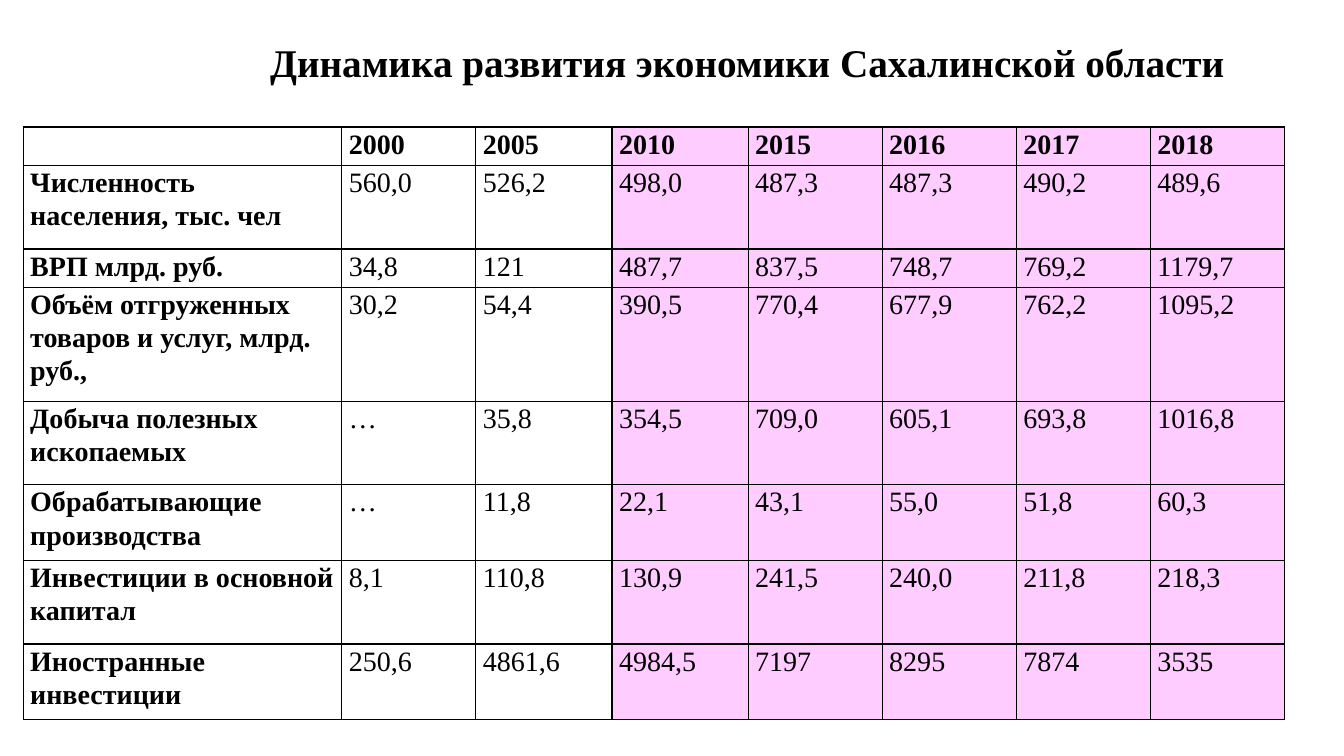
"""Builds a slide with a table of economic indicators of the Sakhalin region by year."""
from lxml import etree
from pptx import Presentation
from pptx.dml.color import RGBColor
from pptx.enum.text import MSO_ANCHOR, MSO_AUTO_SIZE, PP_ALIGN
from pptx.oxml.ns import qn
from pptx.util import Inches, Pt

LEFT = PP_ALIGN.LEFT
TOP = MSO_ANCHOR.TOP
GROW = MSO_AUTO_SIZE.SHAPE_TO_FIT_TEXT
FONT = "Times New Roman"
COLORS = {"text": "000000", "border": "000000", "plain": "FFFFFF", "recent": "FFCCFF"}
FIRST_RECENT_COLUMN = 3

COLUMN_WIDTHS = [3.16, 1.33, 1.35, 1.35, 1.33, 1.33, 1.33, 1.33]
ROW_HEIGHTS = [0.38, 0.83, 0.38, 1.13, 0.83, 0.75, 0.83, 0.75]
INDICATORS = [
    ["", "2000", "2005", "2010", "2015", "2016", "2017", "2018"],
    ["Численность населения, тыс. чел", "560,0", "526,2", "498,0", "487,3", "487,3", "490,2", "489,6"],
    ["ВРП млрд. руб.", "34,8", "121", "487,7", "837,5", "748,7", "769,2", "1179,7"],
    ["Объём отгруженных товаров и услуг, млрд. руб.,", "30,2", "54,4", "390,5", "770,4", "677,9", "762,2", "1095,2"],
    ["Добыча полезных ископаемых", "…", "35,8", "354,5", "709,0", "605,1", "693,8", "1016,8"],
    ["Обрабатывающие производства", "…", "11,8", "22,1", "43,1", "55,0", "51,8", "60,3"],
    ["Инвестиции в основной капитал", "8,1", "110,8", "130,9", "241,5", "240,0", "211,8", "218,3"],
    ["Иностранные инвестиции", "250,6", "4861,6", "4984,5", "7197", "8295", "7874", "3535"],
]


def write(para, text, size, bold):
    """Add one formatted run to a left-aligned paragraph."""
    para.alignment = LEFT
    para.line_spacing = 1.07
    span = para.add_run()
    span.text = text
    span.font.name = FONT
    span.font.size = Pt(size)
    span.font.bold = bold
    span.font.color.rgb = RGBColor.from_string(COLORS["text"])


def draw_borders(cell):
    """Give all four sides of a cell a thin solid line."""
    properties = cell._tc.get_or_add_tcPr()
    for side in ("a:lnL", "a:lnR", "a:lnT", "a:lnB"):
        line = etree.SubElement(properties, qn(side), w=str(Pt(1)))
        fill = etree.SubElement(line, qn("a:solidFill"))
        etree.SubElement(fill, qn("a:srgbClr"), val=COLORS["border"])


deck = Presentation()
deck.slide_width = Inches(13.33)
deck.slide_height = Inches(7.5)
page = deck.slides.add_slide(deck.slide_layouts[5])

title = page.shapes.title
title.left, title.top = Inches(2.58), Inches(0.3)
title.width, title.height = Inches(9.77), Inches(0.58)
title_frame = title.text_frame
title_frame.word_wrap = False
title_frame.auto_size = GROW
title_frame.vertical_anchor = TOP
title_para = title_frame.paragraphs[0]
title_para.space_before = Pt(0)
title_para.space_after = Pt(8)
write(title_para, "Динамика развития экономики Сахалинской области", 28, True)

table = page.shapes.add_table(
    len(ROW_HEIGHTS), len(COLUMN_WIDTHS), Inches(0.23), Inches(1.26),
    Inches(sum(COLUMN_WIDTHS)), Inches(sum(ROW_HEIGHTS)),
).table
table.first_row = False
table.horz_banding = False
for column, width in zip(table.columns, COLUMN_WIDTHS):
    column.width = Inches(width)
for row, height in zip(table.rows, ROW_HEIGHTS):
    row.height = Inches(height)

for row_index, values in enumerate(INDICATORS):
    for column_index, value in enumerate(values):
        cell = table.cell(row_index, column_index)
        cell.margin_left = cell.margin_right = Inches(0.07)
        cell.margin_top = cell.margin_bottom = 0
        cell.vertical_anchor = TOP
        draw_borders(cell)
        shade = "recent" if column_index >= FIRST_RECENT_COLUMN else "plain"
        cell.fill.solid()
        cell.fill.fore_color.rgb = RGBColor.from_string(COLORS[shade])
        if value:
            is_heading = row_index == 0 or column_index == 0
            write(cell.text_frame.paragraphs[0], value, 20, is_heading)

deck.save("out.pptx")
